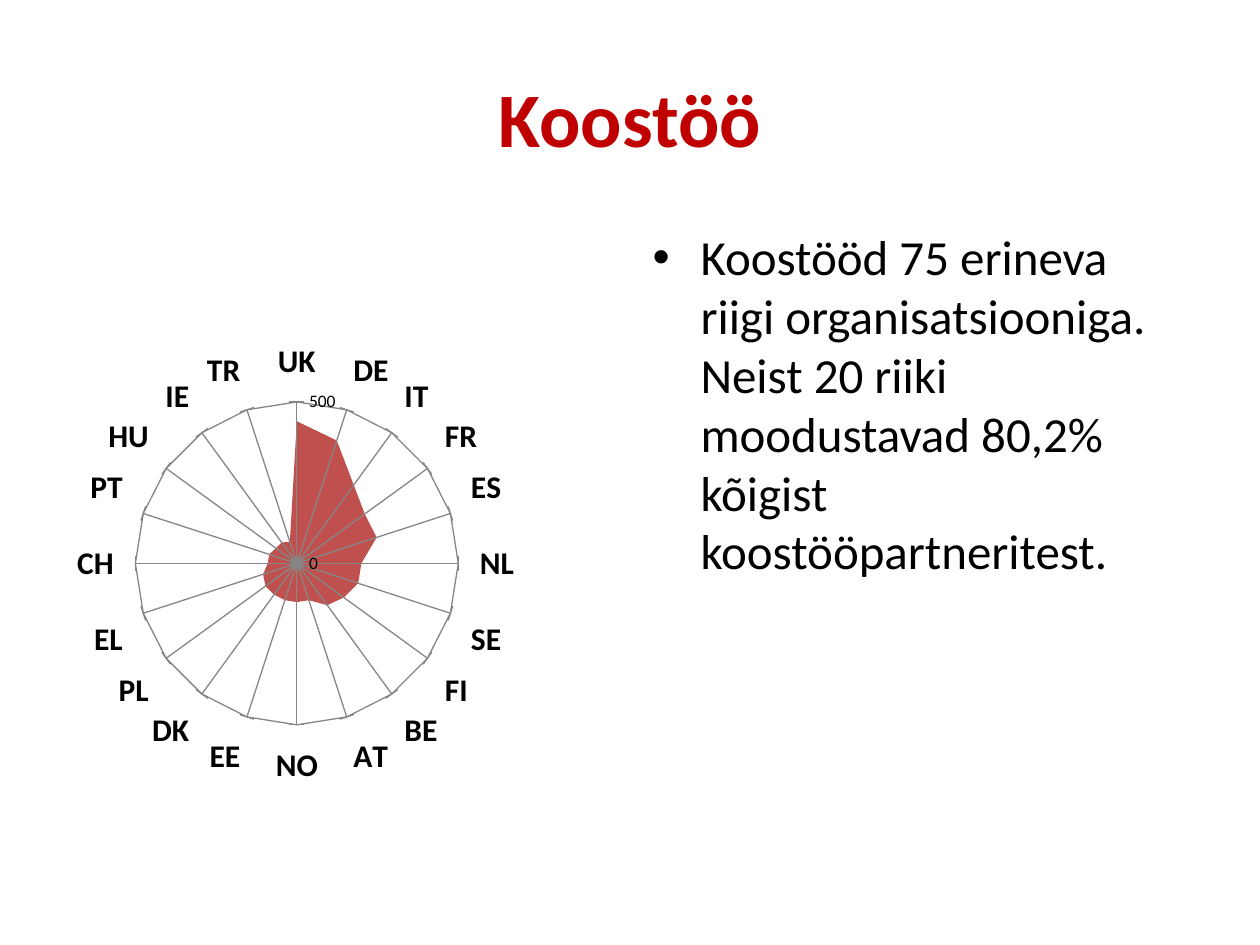
from lxml import etree
from pptx import Presentation
from pptx.chart.data import CategoryChartData
from pptx.dml.color import RGBColor
from pptx.enum.chart import XL_CHART_TYPE, XL_TICK_MARK
from pptx.enum.text import MSO_ANCHOR, PP_ALIGN
from pptx.oxml.ns import qn
from pptx.util import Inches, Pt

RADAR = XL_CHART_TYPE.RADAR_FILLED
TICK_NONE, TICK_OUT = XL_TICK_MARK.NONE, XL_TICK_MARK.OUTSIDE
MIDDLE, TOP = MSO_ANCHOR.MIDDLE, MSO_ANCHOR.TOP
CENTER, LEFT = PP_ALIGN.CENTER, PP_ALIGN.LEFT

RED = RGBColor(0xC0, 0x00, 0x00)
SERIES_RED = RGBColor(0xC0, 0x50, 0x4D)
GRAY = RGBColor(0x86, 0x86, 0x86)
BLACK = RGBColor(0, 0, 0)

PARTNERS = {
    "UK": 440, "DE": 400, "IT": 300, "FR": 260, "ES": 260,
    "NL": 200, "SE": 200, "FI": 180, "BE": 160, "AT": 120,
    "NO": 120, "EE": 120, "DK": 120, "PL": 120, "EL": 110,
    "CH": 90, "PT": 90, "HU": 80, "IE": 80, "TR": 70,
}


def format_font(font, size, color=BLACK, bold=False, name="Calibri"):
    font.name, font.size, font.bold = name, Pt(size), bold
    font.color.rgb = color


def add_text(p, text, align=LEFT, **fmt):
    p.alignment = align
    r = p.add_run()
    r.text = text
    format_font(r.font, **fmt)


class SlideBuilder:
    """Holds the current slide and the shared style."""

    line_width = Pt(0.75)

    def __init__(self, prs, layout):
        self.s = prs.slides.add_slide(prs.slide_layouts[layout])

    def place(self, sp, box, anchor):
        sp.left, sp.top, sp.width, sp.height = map(Inches, box)
        tf = sp.text_frame
        tf.word_wrap = True
        tf.vertical_anchor = anchor
        return tf.paragraphs[0]

    def title(self, text, box):
        p = self.place(self.s.shapes.title, box, MIDDLE)
        add_text(p, text, align=CENTER, size=44, color=RED, bold=True)

    def bullet(self, text, box, indent=0.38):
        p = self.place(self.s.placeholders[1], box, TOP)
        add_text(p, text, size=28)
        pPr = p._p.get_or_add_pPr()
        pPr.set("marL", str(Inches(indent)))
        pPr.set("indent", str(-Inches(indent)))

    def gray_line(self, line):
        line.color.rgb = GRAY
        line.width = self.line_width

    def radar(self, values, box, plot_area):
        data = CategoryChartData()
        data.categories = list(values)
        data.add_series("Series 1", list(values.values()))
        chart = self.s.shapes.add_chart(RADAR, *map(Inches, box), data).chart
        chart.has_title = chart.has_legend = False
        format_font(chart.font, 10)

        # Series
        plot = chart.plots[0]
        plot.vary_by_categories = False
        series = plot.series[0]
        series.smooth = False
        series.format.fill.solid()
        series.format.fill.fore_color.rgb = SERIES_RED
        series.format.line.fill.background()

        # Axes
        cat, val = chart.category_axis, chart.value_axis
        cat.major_tick_mark = cat.minor_tick_mark = TICK_NONE
        cat.format.line.fill.background()
        format_font(cat.tick_labels.font, 18, bold=True)
        val.minimum_scale, val.maximum_scale, val.major_unit = 0, 500, 500
        val.major_tick_mark, val.minor_tick_mark = TICK_OUT, TICK_NONE
        val.tick_labels.number_format = "General"
        val.tick_labels.number_format_is_linked = False
        format_font(val.tick_labels.font, 10)
        self.gray_line(val.format.line)
        for axis in (cat, val):
            axis.has_major_gridlines = True
            self.gray_line(axis.major_gridlines.format.line)
        self.fix_plot_area(chart, plot_area)

    def fix_plot_area(self, chart, fractions):
        area = chart._chartSpace.find(".//" + qn("c:plotArea"))
        for old in area.findall(qn("c:layout")):
            area.remove(old)
        layout = etree.Element(qn("c:layout"))
        area.insert(0, layout)
        manual = etree.SubElement(layout, qn("c:manualLayout"))
        settings = [("layoutTarget", "inner"), ("xMode", "edge"), ("yMode", "edge")]
        for tag, value in settings + list(zip("xywh", fractions)):
            etree.SubElement(manual, qn("c:" + tag)).set("val", str(value))


def main():
    prs = Presentation()
    prs.slide_width, prs.slide_height = Inches(10), Inches(7.5)
    slide = SlideBuilder(prs, layout=1)

    # Heading
    slide.title("Koostöö", (0.5, 0.3, 9, 1.25))

    # Left: partners by country
    slide.radar(PARTNERS, (0.5, 1.75, 4.42, 4.95), (0.13, 0.29, 0.58, 0.52))

    # Right: summary
    slide.bullet(
        "Koostööd 75 erineva riigi organisatsiooniga. Neist 20 riiki "
        "moodustavad 80,2% kõigist koostööpartneritest.",
        (5.08, 1.75, 4.42, 4.95),
    )
    prs.save("out.pptx")


if __name__ == "__main__":
    main()
